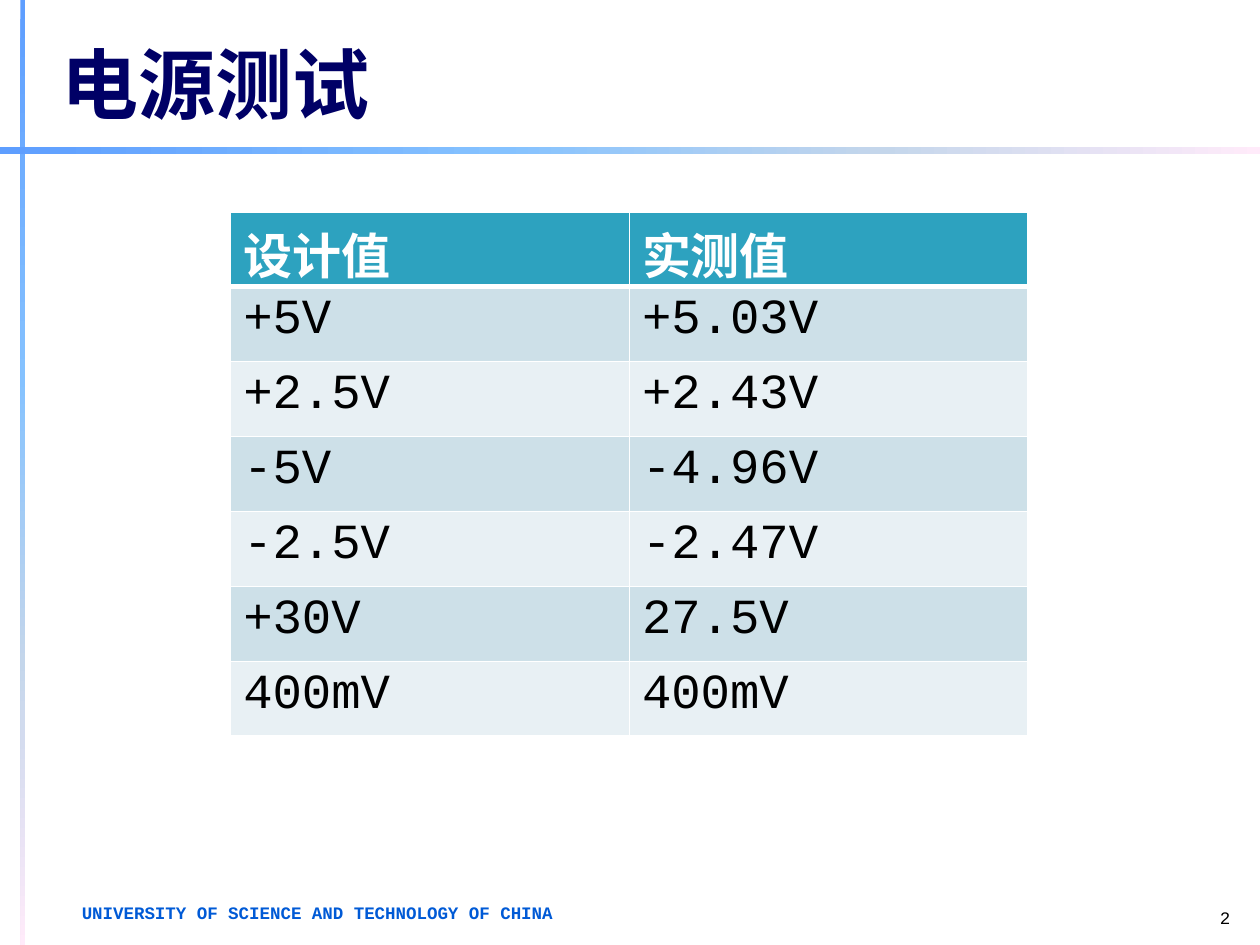
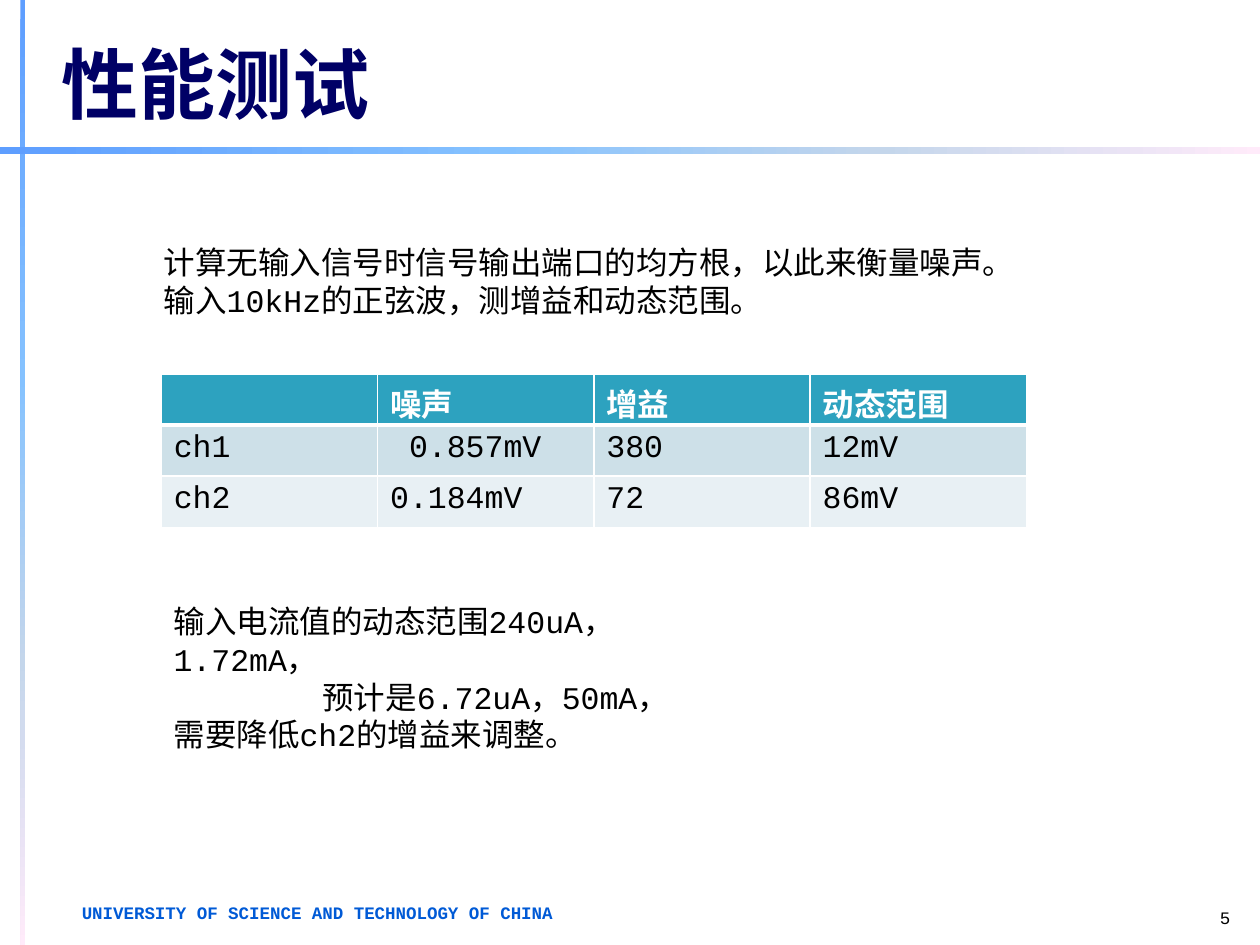
from pptx import Presentation
from pptx.dml.color import RGBColor
from pptx.enum.lang import MSO_LANGUAGE_ID
from pptx.enum.shapes import MSO_SHAPE
from pptx.enum.text import MSO_ANCHOR, PP_ALIGN
from pptx.oxml import parse_xml
from pptx.oxml.ns import nsdecls
from pptx.util import Cm, Pt

NAVY, BLUE, TEAL = "000066", "005AD6", "2DA2BF"
BLACK, WHITE = "000000", "FFFFFF"
ROW_TINTS = ("CDE0E8", "E8F0F4")
BAND_STOPS = ((0, "5E9EFF"), (40, "85C2FF"), (70, "C4D6EB"), (100, "FFEBFA"))
HEADING_FONT, BODY_FONT = "Arial", "Courier New"
WIDTH, HEIGHT = 25.4, 19.05


def color(value):
    return RGBColor.from_string(value)


def write(frame, text, size=18, font=BODY_FONT, fill=BLACK, bold=False,
          align=PP_ALIGN.LEFT, anchor=MSO_ANCHOR.TOP, indents=None):
    """Fill a frame, one paragraph per line; indents maps a line to its indent in cm."""
    frame.word_wrap = True
    frame.vertical_anchor = anchor
    for number, line in enumerate(text.split("\n")):
        paragraph = frame.paragraphs[0] if number == 0 else frame.add_paragraph()
        paragraph.text = line
        paragraph.alignment = align
        if indents and number in indents:
            paragraph._p.get_or_add_pPr().set("indent", str(Cm(indents[number])))
        for run in paragraph.runs:
            run.font.size = Pt(size)
            run.font.name = font
            run.font.bold = bold
            run.font.color.rgb = color(fill)
            run.font.language_id = MSO_LANGUAGE_ID.SIMPLIFIED_CHINESE


class Deck:
    def __init__(self):
        self.presentation = Presentation()
        self.presentation.slide_width = Cm(WIDTH)
        self.presentation.slide_height = Cm(HEIGHT)
        self.slide = None

    def add_slide(self, title, number):
        self.slide = self.presentation.slides.add_slide(
            self.presentation.slide_layouts[6])
        # Crossing bands
        self.band(0.41, 0, 0.1, HEIGHT, angle=90)
        self.band(0, 2.97, WIDTH, 0.13, angle=0)
        # Title and footer
        self.text(title, 0.99, 0.56, 22.86, 2.21, size=44, font=HEADING_FONT,
                  fill=NAVY, bold=True, anchor=MSO_ANCHOR.MIDDLE)
        self.text("UNIVERSITY OF SCIENCE AND TECHNOLOGY OF CHINA",
                  1.4, 18.06, 10.21, 0.69, size=10, fill=BLUE, bold=True)
        self.text(str(number), 24.03, 17.81, 1.02, 1.02, size=10,
                  align=PP_ALIGN.RIGHT, anchor=MSO_ANCHOR.BOTTOM)

    def band(self, left, top, width, height, angle):
        band = self.slide.shapes.add_shape(
            MSO_SHAPE.RECTANGLE, Cm(left), Cm(top), Cm(width), Cm(height))
        band.shadow.inherit = False
        band.line.fill.background()
        stops = "".join(
            f'<a:gs pos="{position * 1000}"><a:srgbClr val="{value}"/></a:gs>'
            for position, value in BAND_STOPS)
        band._element.spPr.prstGeom.addnext(parse_xml(
            f'<a:gradFill {nsdecls("a")}><a:gsLst>{stops}</a:gsLst>'
            f'<a:lin ang="{angle * 60000}" scaled="0"/></a:gradFill>'))

    def text(self, text, left, top, width, height, **style):
        box = self.slide.shapes.add_textbox(Cm(left), Cm(top), Cm(width), Cm(height))
        write(box.text_frame, text, **style)

    def table(self, rows, left, top, column_width, row_height, size):
        columns = len(rows[0])
        table = self.slide.shapes.add_table(
            len(rows), columns, Cm(left), Cm(top),
            Cm(column_width * columns), Cm(row_height * len(rows))).table
        for column in table.columns:
            column.width = Cm(column_width)
        for r, values in enumerate(rows):
            table.rows[r].height = Cm(row_height)
            header = r == 0
            for c, value in enumerate(values):
                cell = table.cell(r, c)
                self.borders(cell, T=3 if r == 1 else 1, B=3 if header else 1)
                cell.fill.solid()
                cell.fill.fore_color.rgb = color(TEAL if header else ROW_TINTS[(r - 1) % 2])
                write(cell.text_frame, value, size=size, bold=header,
                      fill=WHITE if header else BLACK)

    def borders(self, cell, **widths):
        properties = cell._tc.get_or_add_tcPr()
        for side in "LRTB":
            properties.append(parse_xml(
                f'<a:ln{side} {nsdecls("a")} w="{Pt(widths.get(side, 1))}"><a:solidFill>'
                f'<a:srgbClr val="{WHITE}"/></a:solidFill></a:ln{side}>'))


def main():
    deck = Deck()

    # Power supply test
    deck.add_slide("电源测试", 2)
    voltages = [("设计值", "实测值"), ("+5V", "+5.03V"), ("+2.5V", "+2.43V"),
                ("-5V", "-4.96V"), ("-2.5V", "-2.47V"), ("+30V", "27.5V"),
                ("400mV", "400mV")]
    deck.table(voltages, 4.65, 4.27, column_width=8.04, row_height=1.51, size=28)

    # Performance test
    deck.add_slide("性能测试", 5)
    channels = [("", "噪声", "增益", "动态范围"),
                ("ch1", " 0.857mV", "380", "12mV"),
                ("ch2", "0.184mV", "72", "86mV")]
    deck.table(channels, 3.25, 7.54, column_width=4.36, row_height=1.03, size=18)
    deck.text("计算无输入信号时信号输出端口的均方根，以此来衡量噪声。\n"
              "输入10kHz的正弦波，测增益和动态范围。", 3.05, 4.78, 17.83, 1.8)
    deck.text("输入电流值的动态范围240uA，\v1.72mA，\n预计是6.72uA，50mA，\n"
              "需要降低ch2的增益来调整。", 3.25, 12.01, 12.73, 2.57, indents={1: 3})

    deck.presentation.save("out.pptx")


if __name__ == "__main__":
    main()
